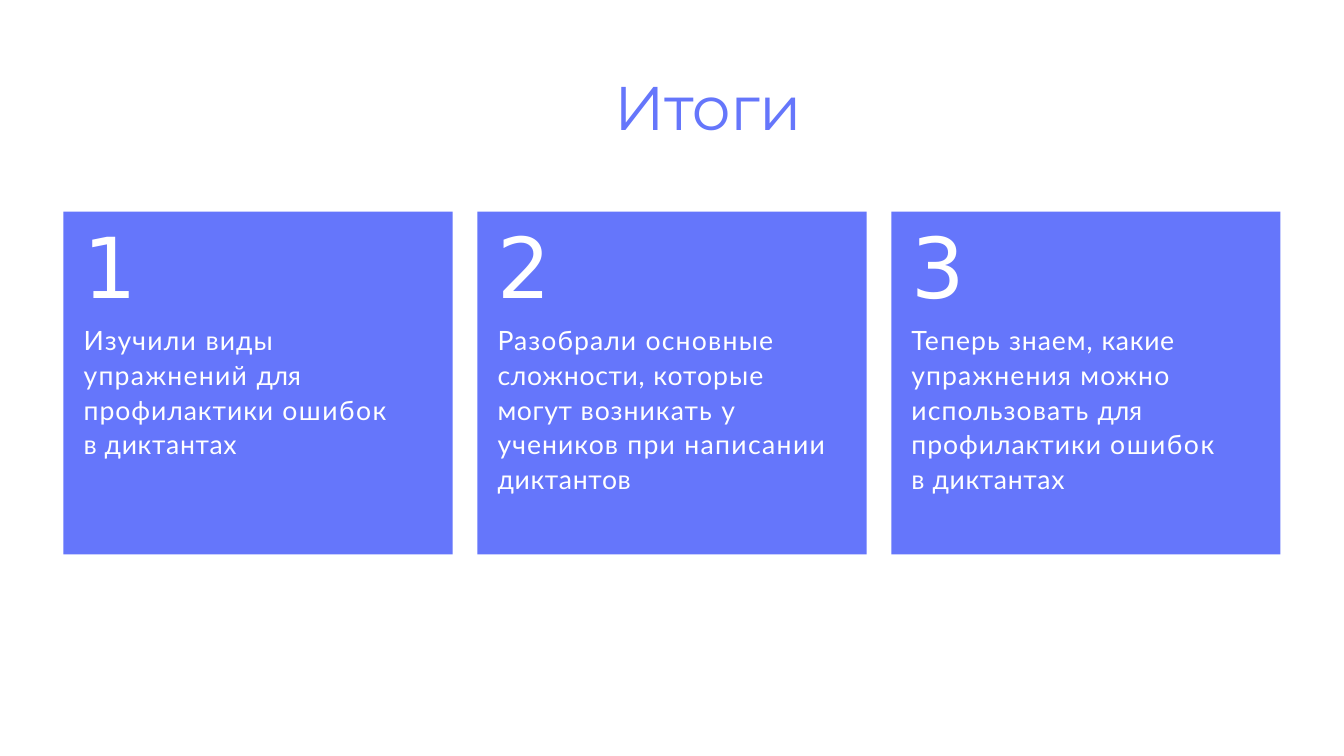
from pptx import Presentation
from pptx.dml.color import RGBColor
from pptx.enum.shapes import MSO_SHAPE
from pptx.enum.text import MSO_ANCHOR, PP_ALIGN
from pptx.util import Inches, Pt

BLUE, WHITE = "6576FB", "FFFFFF"
TITLE = "Итоги"
# Each card: right indent in inches, then words with their letter spacing in points
CARDS = [
    (0.58, [("Изучили", 0.9), ("виды", 0.8), ("упражнений", 0.9), ("для", -0.2),
            ("профилактики", 0.7), ("ошибок", 1.1), ("в", 0.4), ("диктантах", 0.5)]),
    (0.3, [("Разобрали", 0.8), ("основные", 0.9), ("сложности,", 0.5),
           ("которые", 0.8), ("могут", 0.5), ("возникать", 0.8), ("у", 0),
           ("учеников", 0.8), ("при", 0.9), ("написании", 1), ("диктантов", 0.5)]),
    (0.58, [("Теперь", 0.8), ("знаем,", 0.7), ("какие", 0.5), ("упражнения", 0.8),
            ("можно", 0.9), ("использовать", 0.8), ("для", -0.2),
            ("профилактики", 0.7), ("ошибок", 1.1), ("в", 0.4), ("диктантах", 0.5)]),
]
SLIDE_WIDTH, SLIDE_HEIGHT = 13.33, 7.5
MARGIN, GAP = 0.63, 0.245
CARD_TOP, CARD_HEIGHT = 0.28 * SLIDE_HEIGHT, 3.4
CARD_WIDTH = (SLIDE_WIDTH - 2 * MARGIN - GAP * (len(CARDS) - 1)) / len(CARDS)
TEXT_INDENT = 0.2


def color(value):
    return RGBColor.from_string(value)


def style(span, font, size, fill, spacing):
    span.font.name = font
    span.font.size = Pt(size)
    span.font.color.rgb = color(fill)
    span._r.get_or_add_rPr().set("spc", str(round(spacing * 100)))


def set_frame(frame, top):
    frame.word_wrap = True
    frame.vertical_anchor = MSO_ANCHOR.TOP
    frame.margin_left = frame.margin_right = frame.margin_bottom = 0
    frame.margin_top = Inches(top)


def set_paragraph(para, left, before, right=0):
    para.alignment = PP_ALIGN.LEFT
    para.space_before = Pt(before)
    properties = para._p.get_or_add_pPr()
    properties.set("marL", str(Inches(left)))
    properties.set("marR", str(Inches(right)))
    properties.set("indent", "0")


def add_title(page):
    title = page.shapes.title
    title.left, title.top = Inches(6.08), Inches(0.67)
    title.width, title.height = Inches(2.76), Inches(0.75)
    title.text_frame.text = TITLE
    set_frame(title.text_frame, 0.01)
    para = title.text_frame.paragraphs[0]
    set_paragraph(para, 0.01, 1)
    style(para.runs[0], "Montserrat", 44, BLUE, -0.3)


def add_card(page, index, right_indent, words):
    left = MARGIN + index * (CARD_WIDTH + GAP)
    box = page.shapes.add_shape(MSO_SHAPE.RECTANGLE, Inches(left), Inches(CARD_TOP),
                                Inches(CARD_WIDTH), Inches(CARD_HEIGHT))
    box.shadow.inherit = False
    box.fill.solid()
    box.fill.fore_color.rgb = color(BLUE)
    box.line.fill.background()
    frame = box.text_frame
    set_frame(frame, 0.03)

    number = frame.paragraphs[0]
    number.text = str(index + 1)
    set_paragraph(number, TEXT_INDENT, 2.5)
    style(number.runs[0], "DejaVu Sans", 60, WHITE, -4.3)

    summary = frame.add_paragraph()
    set_paragraph(summary, TEXT_INDENT, 4, right_indent)
    summary.line_spacing = 1.09
    for position, (word, spacing) in enumerate(words, start=1):
        span = summary.add_run()
        span.text = word if position == len(words) else word + " "
        style(span, "Lato", 19, WHITE, spacing)


def main():
    deck = Presentation()
    deck.slide_width, deck.slide_height = Inches(SLIDE_WIDTH), Inches(SLIDE_HEIGHT)
    page = deck.slides.add_slide(deck.slide_layouts[5])
    page.background.fill.solid()
    page.background.fill.fore_color.rgb = color(WHITE)
    add_title(page)
    for index, (right_indent, words) in enumerate(CARDS):
        add_card(page, index, right_indent, words)
    deck.save("out.pptx")


if __name__ == "__main__":
    main()
